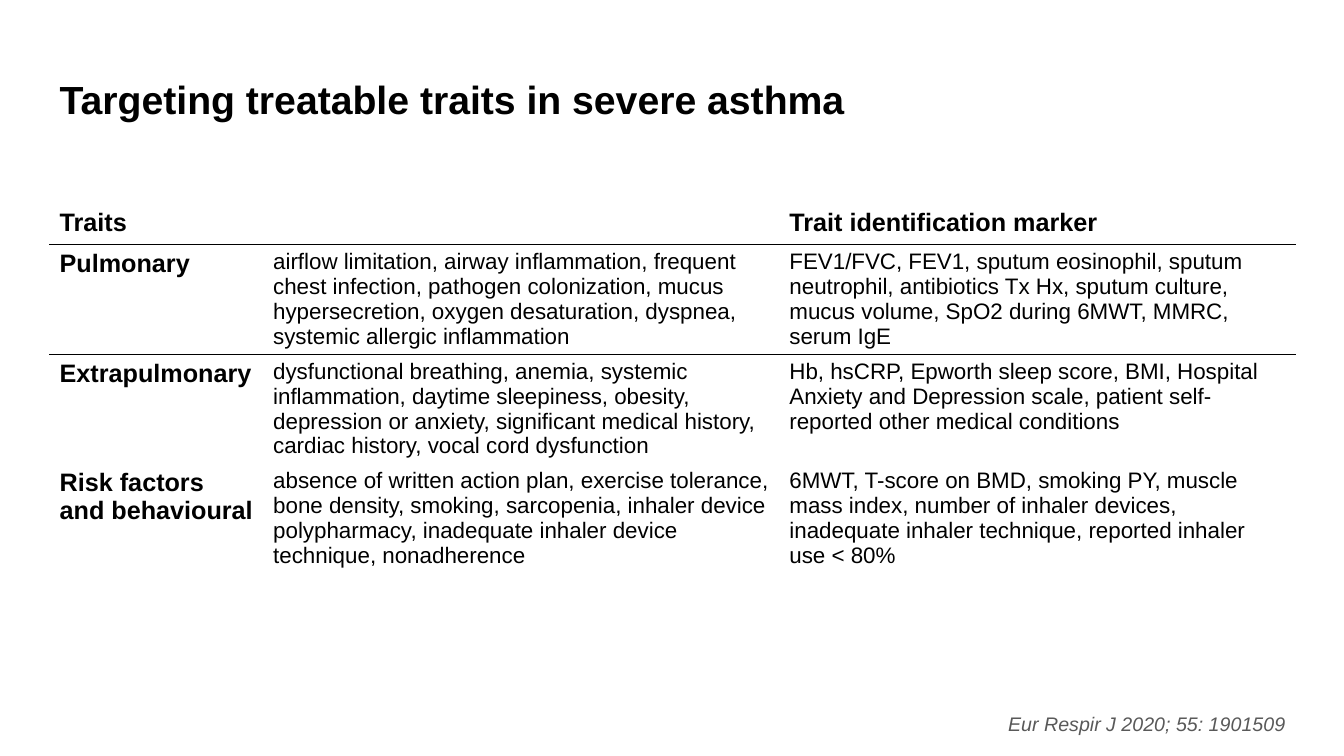
from typing import NamedTuple

from lxml.etree import SubElement
from pptx import Presentation
from pptx.dml.color import RGBColor
from pptx.enum.text import MSO_ANCHOR, PP_ALIGN
from pptx.oxml.ns import qn
from pptx.util import Cm, Pt

FONT = "Arial"
BLACK = "000000"
GREY = "595959"
LEFT, CONTENT_WIDTH = Cm(1.25), Cm(31.4)
COLUMN_WIDTHS = (Cm(5.38), Cm(13.01), Cm(13.01))
ROW_HEIGHT = Cm(1.03)
RULED_ROWS = (0, 1)  # rows with a rule beneath them


class TraitRow(NamedTuple):
    group: str
    traits: str
    markers: str


TRAIT_ROWS = (
    TraitRow("Traits", "", "Trait identification marker"),
    TraitRow(
        "Pulmonary",
        "airflow limitation, airway inflammation, frequent chest infection, pathogen colonization, "
        "mucus hypersecretion, oxygen desaturation, dyspnea, systemic allergic inflammation",
        "FEV1/FVC, FEV1, sputum eosinophil, sputum neutrophil, antibiotics Tx Hx, sputum culture, "
        "mucus volume, SpO2 during 6MWT, MMRC, serum IgE",
    ),
    TraitRow(
        "Extrapulmonary",
        "dysfunctional breathing, anemia, systemic inflammation, daytime sleepiness, obesity, "
        "depression or anxiety, significant medical history, cardiac history, vocal cord dysfunction",
        "Hb, hsCRP, Epworth sleep score, BMI, Hospital Anxiety and Depression scale, "
        "patient self-reported other medical conditions",
    ),
    TraitRow(
        "Risk factors and behavioural",
        "absence of written action plan, exercise tolerance, bone density, smoking, sarcopenia, "
        "inhaler device polypharmacy, inadequate inhaler device technique, nonadherence",
        "6MWT, T-score on BMD, smoking PY, muscle mass index, number of inhaler devices, "
        "inadequate inhaler technique, reported inhaler use < 80%",
    ),
)


def set_font(paragraph, size: int, color: str = BLACK, bold: bool = False, italic: bool = False) -> None:
    font = paragraph.font
    font.name, font.size, font.bold, font.italic = FONT, Pt(size), bold, italic
    font.color.rgb = RGBColor.from_string(color)


def add_rule(cell, side: str) -> None:
    """Draw a 1 pt black border; side is lnT or lnB."""
    line = SubElement(cell._tc.get_or_add_tcPr(), qn(f"a:{side}"), w=str(Pt(1)))
    SubElement(SubElement(line, qn("a:solidFill")), qn("a:srgbClr"), val=BLACK)


def add_title(slide) -> None:
    title = slide.shapes.title
    title.left, title.top, title.width, title.height = LEFT, Cm(1.45), CONTENT_WIDTH, Cm(2.21)
    frame = title.text_frame
    frame.text = "Targeting treatable traits in severe asthma"
    frame.vertical_anchor = MSO_ANCHOR.MIDDLE
    paragraph = frame.paragraphs[0]
    paragraph.alignment = PP_ALIGN.LEFT
    paragraph.line_spacing = 0.9
    set_font(paragraph, 28, bold=True)


def add_trait_table(slide) -> None:
    table = slide.shapes.add_table(
        len(TRAIT_ROWS), len(COLUMN_WIDTHS), LEFT, Cm(5.13), CONTENT_WIDTH, ROW_HEIGHT * len(TRAIT_ROWS)
    ).table
    table.first_row = table.horz_banding = False
    for column, width in zip(table.columns, COLUMN_WIDTHS):
        column.width = width
    for row_index, trait_row in enumerate(TRAIT_ROWS):
        for column_index, text in enumerate(trait_row):
            cell = table.cell(row_index, column_index)
            cell.text = text
            heading = row_index == 0 or column_index == 0
            set_font(cell.text_frame.paragraphs[0], 18 if heading else 16, bold=heading)
            if row_index - 1 in RULED_ROWS:
                add_rule(cell, "lnT")
            if row_index in RULED_ROWS:
                add_rule(cell, "lnB")
            cell.fill.background()


def add_citation(slide) -> None:
    frame = slide.shapes.add_textbox(LEFT, Cm(17.88), CONTENT_WIDTH, Cm(0.79)).text_frame
    frame.word_wrap = True
    frame.text = "Eur Respir J 2020; 55: 1901509"
    paragraph = frame.paragraphs[0]
    paragraph.alignment = PP_ALIGN.RIGHT
    paragraph.line_spacing = 0.9
    set_font(paragraph, 14, GREY, italic=True)


def main() -> None:
    presentation = Presentation()
    presentation.slide_width, presentation.slide_height = Cm(33.87), Cm(19.05)
    slide = presentation.slides.add_slide(presentation.slide_layouts[5])
    add_title(slide)
    add_trait_table(slide)
    add_citation(slide)
    presentation.save("out.pptx")


if __name__ == "__main__":
    main()
